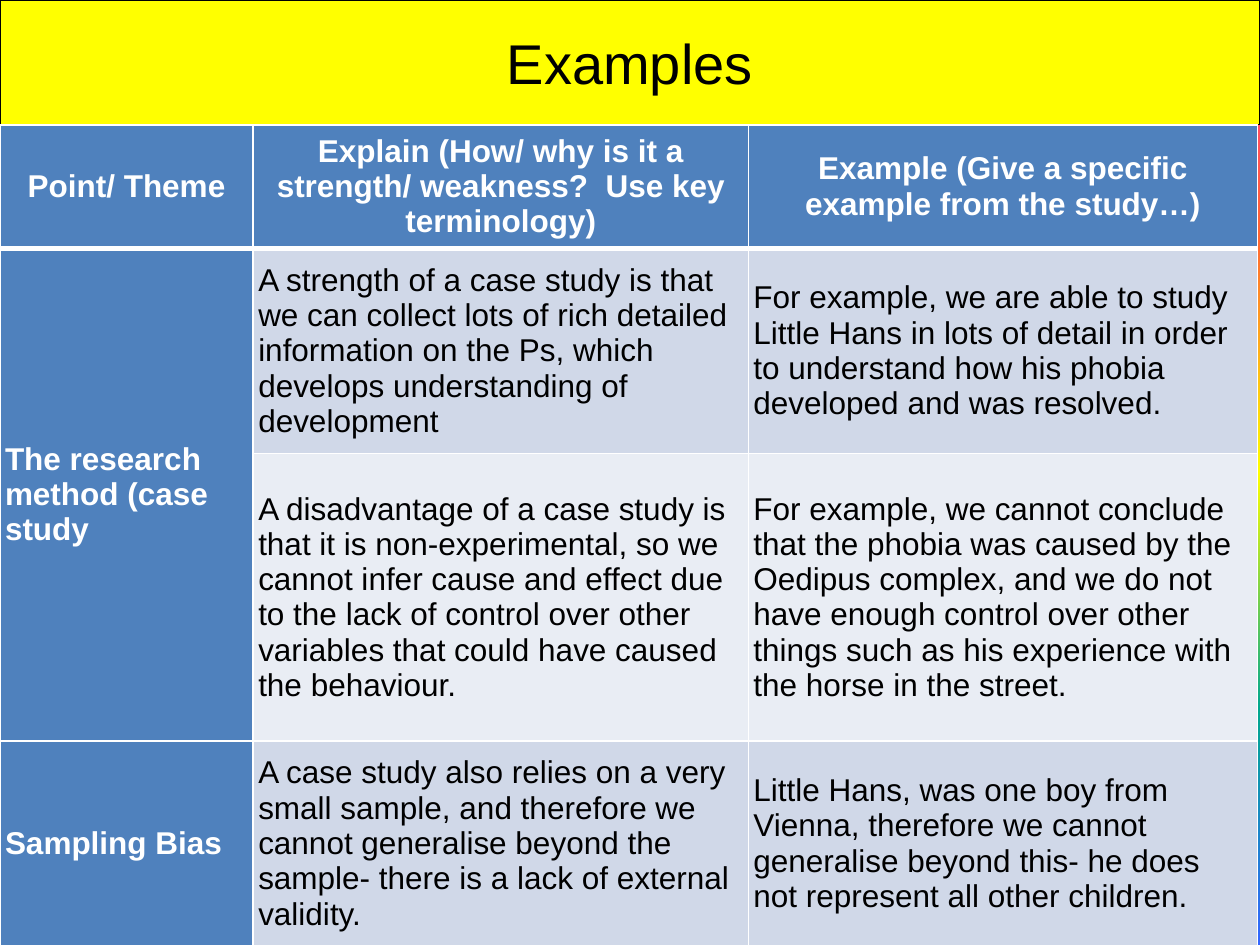
import pptx
import pptx.dml.color
import pptx.enum.text
import pptx.oxml
import pptx.oxml.ns
import pptx.util
from pptx.util import Inches

COLOURS = {
    "title": "FFFF00",
    "heading": "4F81BD",
    "odd": "D0D8E8",
    "even": "E9EDF4",
    "light": "FFFFFF",
    "dark": "000000",
}
RAINBOW = {0: "FF3399", 25: "FF6633", 50: "FFFF00", 75: "01A78F", 100: "3366FF"}
TITLE_HEIGHT = 0.99
COLUMN_WIDTHS = [2.01, 3.93, 4.04]
ROW_HEIGHTS = [0.98, 1.63, 2.28, 1.63]
ROWS = [
    ["Point/ Theme",
     "Explain (How/ why is it a strength/ weakness?  Use key terminology)",
     "Example (Give a specific example from the study…)"],
    ["The research method (case study",
     "A strength of a case study is that we can collect lots of rich detailed "
     "information on the Ps, which develops understanding of development",
     "For example, we are able to study Little Hans in lots of detail in order "
     "to understand how his phobia developed and was resolved."],
    ["",
     "A disadvantage of a case study is that it is non-experimental, so we cannot "
     "infer cause and effect due to the lack of control over other variables that "
     "could have caused the behaviour.",
     "For example, we cannot conclude that the phobia was caused by the Oedipus "
     "complex, and we do not have enough control over other things such as his "
     "experience with the horse in the street."],
    ["Sampling Bias",
     "A case study also relies on a very small sample, and therefore we cannot "
     "generalise beyond the sample- there is a lack of external validity.",
     "Little Hans, was one boy from Vienna, therefore we cannot generalise beyond "
     "this- he does not represent all other children."],
]
CELL_FORMAT = {
    "margin_left": Inches(0.04),
    "margin_right": Inches(0.04),
    "margin_top": 0,
    "margin_bottom": 0,
    "vertical_anchor": pptx.enum.text.MSO_ANCHOR.MIDDLE,
}


def rgb(name):
    return pptx.dml.color.RGBColor.from_string(COLOURS[name])


def paint(fill, name):
    fill.solid()
    fill.fore_color.rgb = rgb(name)


def write(frame, text, size, colour, bold=False, centred=False):
    paragraph = frame.paragraphs[0]
    align = pptx.enum.text.PP_ALIGN
    paragraph.alignment = align.CENTER if centred else align.LEFT
    words = paragraph.add_run()
    words.text = text
    font_format = {"name": "Arial", "size": pptx.util.Pt(size), "bold": bold}
    for attribute, value in font_format.items():
        setattr(words.font, attribute, value)
    words.font.color.rgb = rgb(colour)


def set_rainbow_background(slide):
    fill = slide.background.fill
    fill.gradient()
    fill.gradient_angle = 270
    stops = slide.element.find(".//" + pptx.oxml.ns.qn("a:gsLst"))
    for stop in list(stops):
        stops.remove(stop)
    for percent, colour in RAINBOW.items():
        stops.append(pptx.oxml.parse_xml(
            f'<a:gs {pptx.oxml.ns.nsdecls("a")} pos="{percent * 1000}">'
            f'<a:srgbClr val="{colour}"/></a:gs>'))


def add_title(slide, text):
    banner = slide.shapes.title
    place = {"left": 0, "top": 0, "width": Inches(10), "height": Inches(TITLE_HEIGHT)}
    for attribute, value in place.items():
        setattr(banner, attribute, value)
    paint(banner.fill, "title")
    paint(banner.line.fill, "dark")
    banner.line.width = pptx.util.Pt(0.75)
    banner.text_frame.vertical_anchor = pptx.enum.text.MSO_ANCHOR.MIDDLE
    write(banner.text_frame, text, 32, "dark", centred=True)


def add_borders(cell, widths):
    """Draw white borders; widths maps a side (L, R, T, B) to points."""
    properties = cell._tc.get_or_add_tcPr()
    for side, width in widths.items():
        properties.append(pptx.oxml.parse_xml(
            f'<a:ln{side} {pptx.oxml.ns.nsdecls("a")} w="{pptx.util.Pt(width)}">'
            f'<a:solidFill><a:srgbClr val="{COLOURS["light"]}"/></a:solidFill>'
            f'</a:ln{side}>'))


def format_cell(cell, text, row, column):
    is_header = row == 0
    is_heading = is_header or column == 0
    for attribute, value in CELL_FORMAT.items():
        setattr(cell, attribute, value)
    add_borders(cell, {"L": 1, "R": 1, "T": 3 if row == 1 else 1,
                       "B": 3 if is_header else 1})
    band = "odd" if row % 2 else "even"
    paint(cell.fill, "heading" if is_heading else band)
    if text:
        write(cell.text_frame, text, 18, "light" if is_heading else "dark",
              bold=is_heading, centred=is_header)


def add_evaluation_table(slide):
    table = slide.shapes.add_table(
        len(ROWS), len(COLUMN_WIDTHS), 0, Inches(TITLE_HEIGHT),
        Inches(sum(COLUMN_WIDTHS)), Inches(sum(ROW_HEIGHTS))).table
    for column, width in zip(table.columns, COLUMN_WIDTHS):
        column.width = Inches(width)
    for row, height in zip(table.rows, ROW_HEIGHTS):
        row.height = Inches(height)
    table.cell(1, 0).merge(table.cell(2, 0))
    for row, texts in enumerate(ROWS):
        for column, text in enumerate(texts):
            format_cell(table.cell(row, column), text, row, column)


def main():
    deck = pptx.Presentation()
    deck.slide_width, deck.slide_height = Inches(10), Inches(7.5)
    slide = deck.slides.add_slide(deck.slide_layouts.get_by_name("Title Only"))
    set_rainbow_background(slide)
    add_title(slide, "Examples")
    add_evaluation_table(slide)
    deck.save("out.pptx")


if __name__ == "__main__":
    main()
